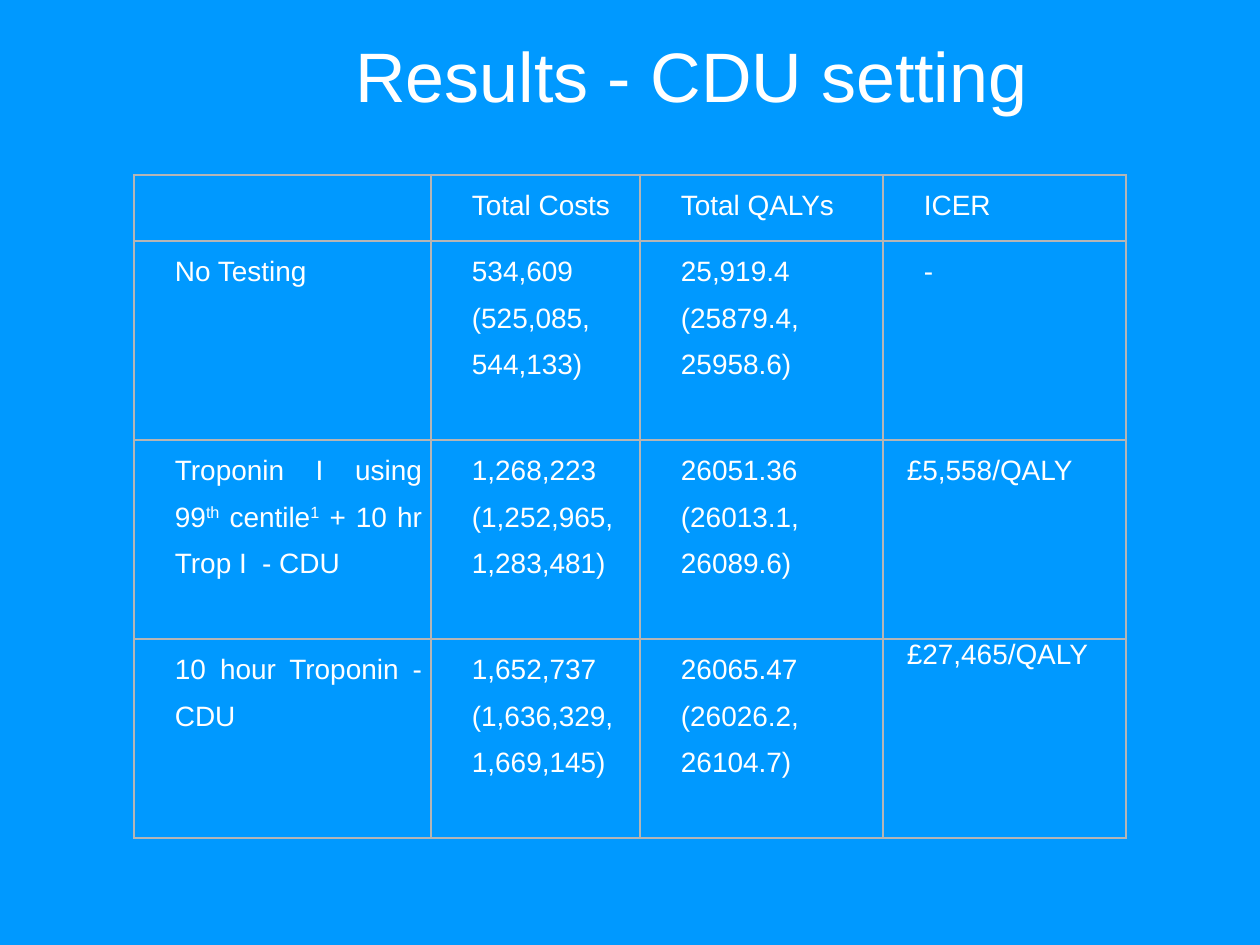
"""Build the CDU setting results slide with its cost-effectiveness table."""
from dataclasses import dataclass

from lxml.etree import SubElement
from pptx import Presentation
from pptx.dml.color import RGBColor
from pptx.enum.text import MSO_AUTO_SIZE, PP_ALIGN
from pptx.oxml.ns import qn
from pptx.slide import Slide
from pptx.table import _Cell
from pptx.text.text import _Run
from pptx.util import Emu, Pt

PX_PER_INCH = 126
BACKGROUND = RGBColor(0x00, 0x99, 0xFF)
WHITE = RGBColor(0xFF, 0xFF, 0xFF)
BORDER = RGBColor(0xB5, 0xB5, 0xB5)
FONT = "Arial"
SUPERSCRIPT_MARK = "^"


@dataclass(frozen=True)
class Entry:
    lines: tuple[str, ...]
    indent: int = 32
    spacing: float = 1.5


@dataclass(frozen=True)
class Strategy:
    name: Entry
    costs: Entry
    qalys: Entry
    icer: Entry

    def entries(self) -> tuple[Entry, ...]:
        return self.name, self.costs, self.qalys, self.icer


COLUMN_WIDTHS = (297, 209, 243, 243)
ROW_HEIGHTS = (66, 199, 199, 199)
STRATEGIES = (
    Strategy(Entry(()), Entry(("Total Costs",)), Entry(("Total QALYs",)), Entry(("ICER",))),
    Strategy(
        Entry(("No Testing",)),
        Entry(("534,609", "(525,085,", "544,133)")),
        Entry(("25,919.4", "(25879.4,", "25958.6)")),
        Entry(("-",)),
    ),
    Strategy(
        Entry(("Troponin I using 99^th^ centile^1^ + 10 hr Trop I  - CDU",)),
        Entry(("1,268,223", "(1,252,965,", "1,283,481)")),
        Entry(("26051.36", "(26013.1,", "26089.6)")),
        Entry(("£5,558/QALY",), indent=15),
    ),
    Strategy(
        Entry(("10 hour Troponin - CDU",)),
        Entry(("1,652,737", "(1,636,329,", "1,669,145)")),
        Entry(("26065.47", "(26026.2,", "26104.7)")),
        Entry(("£27,465/QALY",), indent=15, spacing=1.0),
    ),
)


def px(length: int) -> Emu:
    """Convert pixels to EMU."""
    return Emu(round(length * 914400 / PX_PER_INCH))


def format_run(run: _Run, size: int) -> None:
    """Apply the slide's font to a run."""
    run.font.name = FONT
    run.font.size = Pt(size)
    run.font.bold = False
    run.font.color.rgb = WHITE


def draw_borders(cell: _Cell) -> None:
    """Put a thin grey line on all four sides of a cell."""
    properties = cell._tc.get_or_add_tcPr()
    for position, side in enumerate(("a:lnL", "a:lnR", "a:lnT", "a:lnB")):
        line = SubElement(properties, qn(side), w=str(Pt(1)))
        solid = SubElement(line, qn("a:solidFill"))
        SubElement(solid, qn("a:srgbClr"), val=str(BORDER))
        properties.insert(position, line)


def fill_cell(cell: _Cell, entry: Entry) -> None:
    """Write an entry into a transparent, bordered cell."""
    cell.fill.background()
    draw_borders(cell)
    cell.margin_left = cell.margin_right = px(9)
    cell.margin_top = cell.margin_bottom = 0
    for number, line in enumerate(entry.lines):
        frame = cell.text_frame
        paragraph = frame.add_paragraph() if number else frame.paragraphs[0]
        paragraph.alignment = PP_ALIGN.JUSTIFY
        paragraph.line_spacing = entry.spacing
        paragraph._p.get_or_add_pPr().set("marL", str(px(entry.indent)))
        for part, wording in enumerate(line.split(SUPERSCRIPT_MARK)):
            run = paragraph.add_run()
            run.text = wording
            format_run(run, 16)
            if part % 2:
                run.font._element.set("baseline", "30000")


def draw_title(slide: Slide) -> None:
    """Draw the slide title."""
    title = slide.shapes.add_textbox(px(343), px(26), px(712), px(97)).text_frame
    title.word_wrap = False
    title.auto_size = MSO_AUTO_SIZE.SHAPE_TO_FIT_TEXT
    title.text = "Results - CDU setting"
    format_run(title.paragraphs[0].runs[0], 40)


def draw_results(slide: Slide) -> None:
    """Draw the table of costs, QALYs and ICERs."""
    results = slide.shapes.add_table(
        len(ROW_HEIGHTS), len(COLUMN_WIDTHS),
        px(134), px(175), px(sum(COLUMN_WIDTHS)), px(sum(ROW_HEIGHTS)),
    ).table
    results.first_row = results.horz_banding = False
    for column, width in zip(results.columns, COLUMN_WIDTHS):
        column.width = px(width)
    for row, height, strategy in zip(results.rows, ROW_HEIGHTS, STRATEGIES):
        row.height = px(height)
        for cell, entry in zip(row.cells, strategy.entries()):
            fill_cell(cell, entry)


def main() -> None:
    """Build and save the presentation."""
    presentation = Presentation()
    presentation.slide_width, presentation.slide_height = px(1260), px(945)
    slide = presentation.slides.add_slide(presentation.slide_layouts[6])
    slide.background.fill.solid()
    slide.background.fill.fore_color.rgb = BACKGROUND
    draw_title(slide)
    draw_results(slide)
    presentation.save("out.pptx")


if __name__ == "__main__":
    main()
